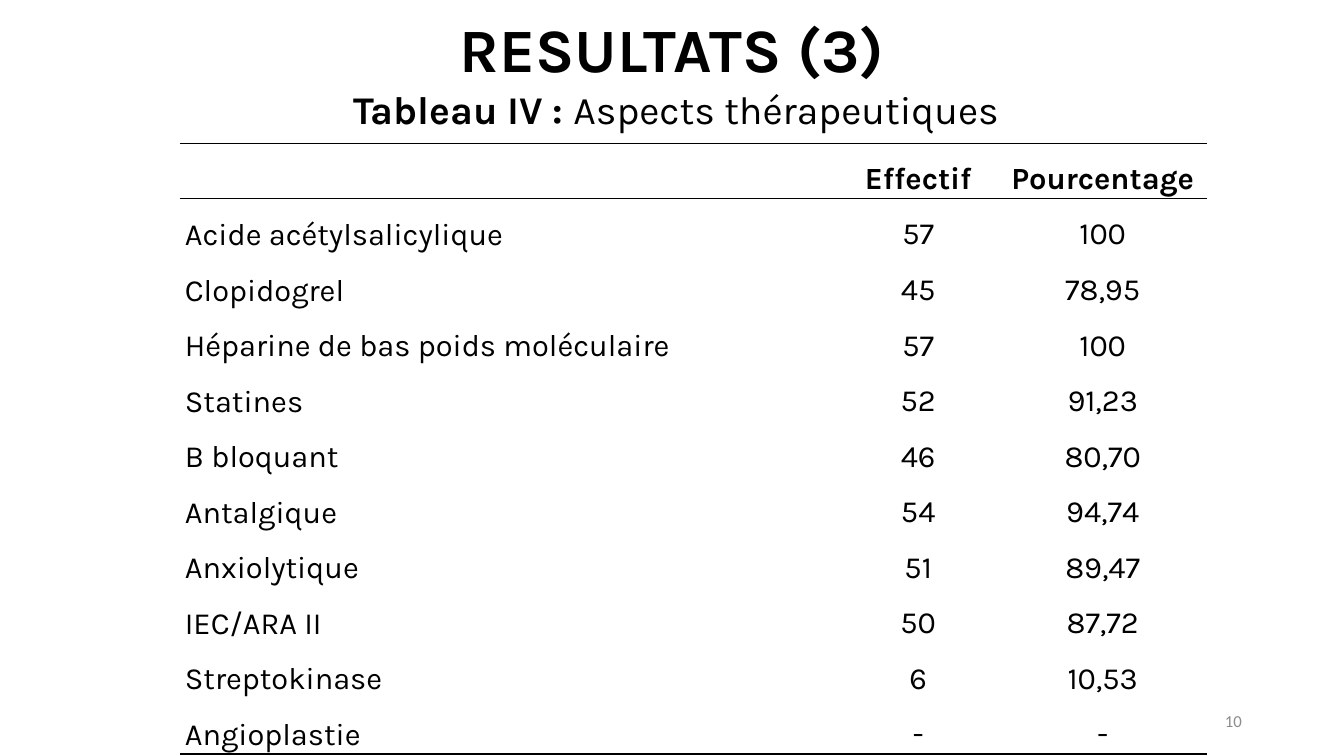
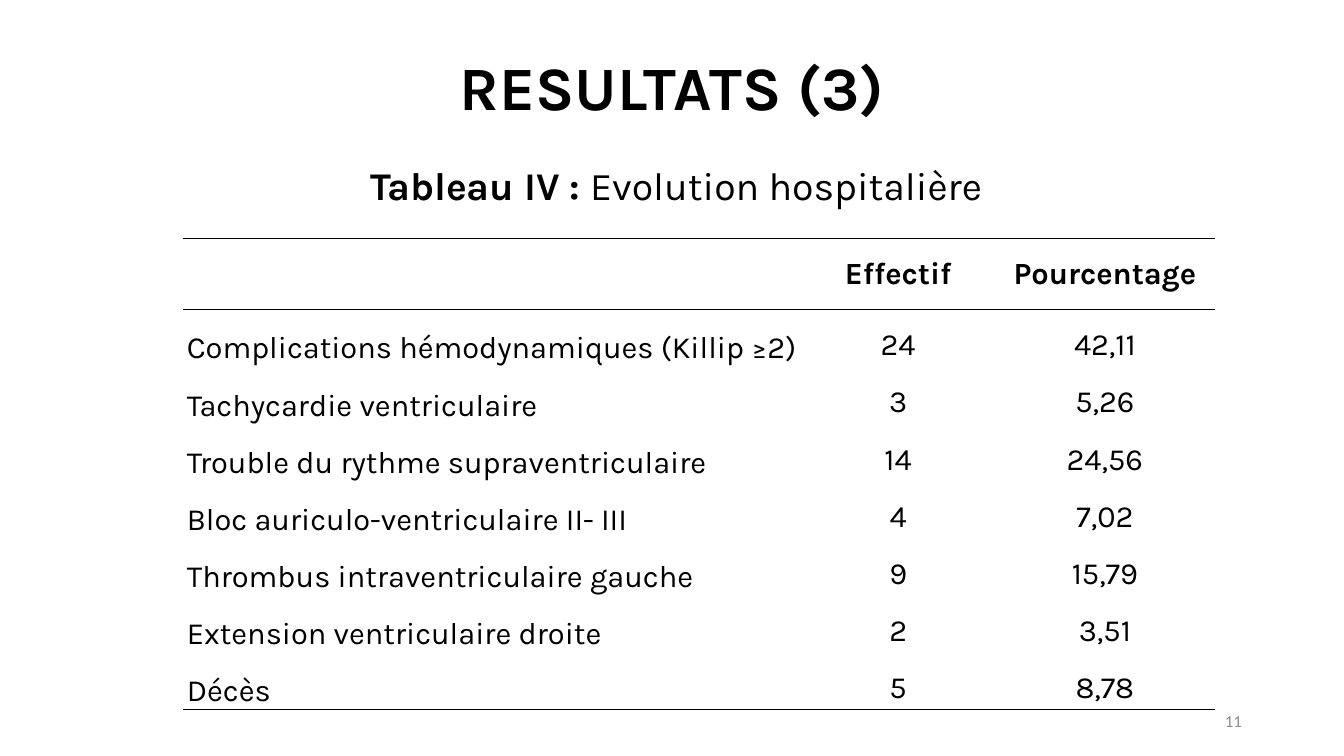
from lxml.etree import SubElement
from pptx import Presentation
from pptx.dml.color import RGBColor
from pptx.enum.text import MSO_ANCHOR, PP_ALIGN
from pptx.oxml.ns import qn
from pptx.util import Cm, Pt

BLACK, GREY = "000000", "8C8C8C"
FONT, NUMBER_FONT = "Karla", "Calibri"
PLAIN_TABLE = "{2D5ABB26-0587-4C30-8999-92F81FD0307C}"
LEFT, WIDTH = 2.34, 29.3
HEADERS = ("", "Effectif", "Pourcentage")

TREATMENTS = [
    ("Acide acétylsalicylique", "57", "100"),
    ("Clopidogrel", "45", "78,95"),
    ("Héparine de bas poids moléculaire", "57", "100"),
    ("Statines", "52", "91,23"),
    ("B bloquant", "46", "80,70"),
    ("Antalgique", "54", "94,74"),
    ("Anxiolytique", "51", "89,47"),
    ("IEC/ARA II", "50", "87,72"),
    ("Streptokinase", "6", "10,53"),
    ("Angioplastie", "-", "-"),
]
OUTCOMES = [
    ("Complications hémodynamiques (Killip ≥2)", "24", "42,11"),
    ("Tachycardie ventriculaire", "3", "5,26"),
    ("Trouble du rythme supraventriculaire", "14", "24,56"),
    ("Bloc auriculo-ventriculaire II- III", "4", "7,02"),
    ("Thrombus intraventriculaire gauche", "9", "15,79"),
    ("Extension ventriculaire droite", "2", "3,51"),
    ("Décès", "5", "8,78"),
]


def rgb(value):
    return RGBColor.from_string(value)


def add_run(p, text, size, bold=False, color=BLACK, font=FONT):
    r = p.add_run()
    r.text = text
    r.font.size, r.font.bold, r.font.name = Pt(size), bold, font
    r.font.color.rgb = rgb(color)


def add_title(s, text, top):
    title = s.shapes.title
    title.left, title.top = Cm(LEFT), Cm(top)
    title.width, title.height = Cm(29.21), Cm(3.68)
    title.text_frame.vertical_anchor = MSO_ANCHOR.MIDDLE
    p = title.text_frame.paragraphs[0]
    p.alignment, p.line_spacing = PP_ALIGN.CENTER, 0.9
    add_run(p, text, 44, bold=True)


def add_text_box(s, left, top, width, height, align):
    """Add a wrapping text box and return its first paragraph."""
    tf = s.shapes.add_textbox(Cm(left), Cm(top), Cm(width), Cm(height)).text_frame
    tf.word_wrap = True
    tf.paragraphs[0].alignment = align
    return tf.paragraphs[0]


def add_caption(s, label, text, top):
    p = add_text_box(s, LEFT, top, WIDTH + 0.1, 1.45, PP_ALIGN.CENTER)
    add_run(p, label, 28, bold=True)
    add_run(p, text, 28)


def add_slide_number(s, number):
    p = add_text_box(s, 23.93, 17.79, 7.62, 0.76, PP_ALIGN.RIGHT)
    add_run(p, str(number), 12, color=GREY, font=NUMBER_FONT)


def add_rules(cell, *sides):
    """Draw thin black borders; sides are lnT and lnB, in that order."""
    tcPr = cell._tc.get_or_add_tcPr()
    for side in sides:
        ln = SubElement(tcPr, qn(f"a:{side}"), w=str(Pt(1)))
        fill = SubElement(ln, qn("a:solidFill"))
        SubElement(fill, qn("a:srgbClr"), val=BLACK)


def fill_cell(cell, text, bold, align, anchor, inset):
    cell.margin_left = cell.margin_right = Cm(inset)
    cell.margin_top = cell.margin_bottom = 0
    cell.vertical_anchor = anchor
    cell.fill.background()
    if text:
        p = cell.text_frame.paragraphs[0]
        p.alignment, p.line_spacing, p.space_after = align, 1.5, Pt(8)
        add_run(p, text, 22, bold)


def add_results_table(s, rows, left, top, col_widths, header_height, row_height,
                      label_anchor, inset):
    rows = [HEADERS, *rows]
    heights = [header_height] + [row_height] * (len(rows) - 1)
    table = s.shapes.add_table(len(rows), len(HEADERS), Cm(left), Cm(top),
                               Cm(sum(col_widths)), Cm(sum(heights))).table
    table.first_row = table.horz_banding = False
    table._tbl.tblPr.find(qn("a:tableStyleId")).text = PLAIN_TABLE
    for column, width in zip(table.columns, col_widths):
        column.width = Cm(width)
    for i, values in enumerate(rows):
        table.rows[i].height = Cm(heights[i])
        for j, text in enumerate(values):
            cell = table.cell(i, j)
            if i == 0:
                add_rules(cell, "lnT", "lnB")
            elif i == len(rows) - 1:
                add_rules(cell, "lnB")
            is_label = i > 0 and j == 0
            fill_cell(cell, text, i == 0,
                      PP_ALIGN.JUSTIFY if is_label else PP_ALIGN.CENTER,
                      label_anchor if is_label else MSO_ANCHOR.TOP, inset)


def add_results_slide(prs, number, caption, title_top, caption_top, **table):
    s = prs.slides.add_slide(prs.slide_layouts[5])
    add_title(s, "RESULTATS (3)", title_top)
    add_caption(s, "Tableau IV : ", caption, caption_top)
    add_slide_number(s, number)
    add_results_table(s, **table)


def main():
    prs = Presentation()
    prs.slide_width, prs.slide_height = Cm(33.87), Cm(19.05)
    add_results_slide(
        prs, 10, "Aspects thérapeutiques", title_top=-0.51, caption_top=2.03,
        rows=TREATMENTS, left=4.53, top=3.61, col_widths=(16.6, 4.02, 5.28),
        header_height=1.4, row_height=1.4,
        label_anchor=MSO_ANCHOR.MIDDLE, inset=0.13)
    add_results_slide(
        prs, 11, "Evolution hospitalière", title_top=0.43, caption_top=3.94,
        rows=OUTCOMES, left=4.61, top=6, col_widths=(15.6, 4.85, 5.57),
        header_height=1.8, row_height=1.44,
        label_anchor=MSO_ANCHOR.BOTTOM, inset=0.1)
    prs.save("out.pptx")


if __name__ == "__main__":
    main()
